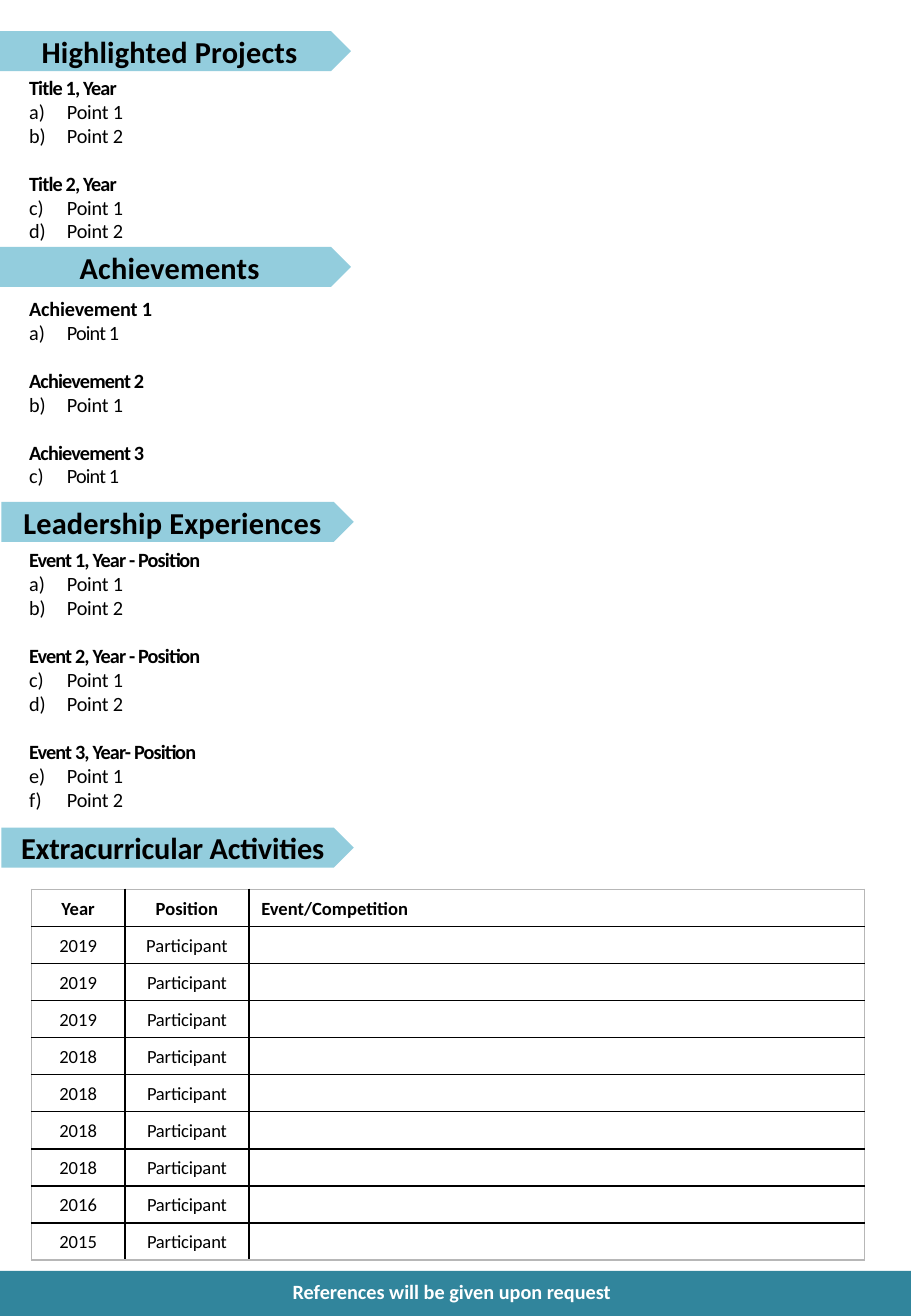
"""Build a resume page with project, achievement, leadership and activity sections."""
from lxml import etree
from pptx import Presentation
from pptx.dml.color import RGBColor
from pptx.enum import shapes, text
from pptx.oxml.ns import qn
from pptx.util import Cm, Pt

BLACK = RGBColor(0x00, 0x00, 0x00)
WHITE = RGBColor(0xFF, 0xFF, 0xFF)
SKY = RGBColor(0x93, 0xCD, 0xDD)
TEAL = RGBColor(0x31, 0x85, 0x9C)
GRID, FRAME = "000000", "B7B7B7"
LINE_PITCH = Pt(14.2)
TIGHT, NORMAL, LOOSE = -50, -10, 10


def add_run(paragraph, words, size, bold=False, color=BLACK, spacing=0):
    run = paragraph.add_run()
    run.text = words
    run.font.color.rgb = color
    for name, value in {"name": "Calibri", "size": Pt(size), "bold": bold}.items():
        setattr(run.font, name, value)
    run.font._element.set("spc", str(spacing))


def add_bar(kind, left, top, width, height, color):
    shape = slide.shapes.add_shape(kind, Cm(left), Cm(top), Cm(width), Cm(height))
    shape.shadow.inherit = False
    shape.fill.solid()
    shape.fill.fore_color.rgb = color
    shape.line.fill.background()
    return shape


presentation = Presentation()
presentation.slide_width, presentation.slide_height = Cm(19.05), Cm(27.51)
slide = presentation.slides.add_slide(presentation.slide_layouts[6])

banners = [
    ("Highlighted Projects", -0.03, 0.65, LOOSE),
    ("Achievements", -0.03, 5.16, LOOSE),
    ("Leadership Experiences", 0.03, 10.49, LOOSE),
    ("Extracurricular Activities", 0.03, 17.3, NORMAL),
]
for heading, left, top, spacing in banners:
    banner = add_bar(shapes.MSO_SHAPE.PENTAGON, left, top, 7.37, 0.84, SKY)
    banner.text_frame.vertical_anchor = text.MSO_ANCHOR.MIDDLE
    paragraph = banner.text_frame.paragraphs[0]
    paragraph.alignment = text.PP_ALIGN.CENTER
    add_run(paragraph, heading, 18, True, spacing=spacing)

two_points = ["Point 1", "Point 2"]
sections = [
    (1.45, 18.39, 4.24, [
        ("Title 1, Year", TIGHT, two_points, NORMAL),
        ("Title 2, Year", TIGHT, two_points, NORMAL),
    ]),
    (6.07, 19, 4.24, [
        ("Achievement 1", NORMAL, ["Point 1"], TIGHT),
        ("Achievement 2", TIGHT, ["Point 1"], NORMAL),
        ("Achievement 3", TIGHT, ["Point 1"], TIGHT),
    ]),
    (11.33, 18.39, 5.74, [
        ("Event 1, Year - Position", TIGHT, two_points, NORMAL),
        ("Event 2, Year - Position", TIGHT, two_points, NORMAL),
        ("Event 3, Year- Position", TIGHT, two_points, NORMAL),
    ]),
]
for top, width, height, entries in sections:
    box = slide.shapes.add_textbox(Cm(-0.3), Cm(top), Cm(width), Cm(height))
    frame = box.text_frame
    frame.word_wrap = True
    for index, (title, title_spacing, points, point_spacing) in enumerate(entries):
        paragraph = frame.add_paragraph() if index else frame.paragraphs[0]
        paragraph.line_spacing = LINE_PITCH
        if index:
            paragraph.space_before = LINE_PITCH
        paragraph._p.get_or_add_pPr().set("marL", str(Cm(0.66)))
        add_run(paragraph, title, 12, True, spacing=title_spacing)
        for point in points:
            paragraph = frame.add_paragraph()
            paragraph.line_spacing = LINE_PITCH
            properties = paragraph._p.get_or_add_pPr()
            properties.set("marL", str(Cm(1.45)))
            properties.set("indent", str(Cm(-0.79)))
            etree.SubElement(properties, qn("a:buAutoNum"), type="alphaLcParenR")
            add_run(paragraph, point, 12, spacing=point_spacing)

years = [2019] * 3 + [2018] * 4 + [2016, 2015]
rows = [("Year", "Position", "Event/Competition")]
rows += [(str(year), "Participant", "") for year in years]
column_widths = [1.95, 2.6, 12.87]
graphic = slide.shapes.add_table(
    len(rows), len(column_widths), Cm(0.66), Cm(18.59), Cm(sum(column_widths)), Cm(7.75))
table = graphic.table
for column, width in zip(table.columns, column_widths):
    column.width = Cm(width)
last_row, last_column = len(rows) - 1, len(column_widths) - 1
for r, row in enumerate(rows):
    table.rows[r].height = Cm(0.775)
    for c, words in enumerate(row):
        cell = table.cell(r, c)
        cell.vertical_anchor = text.MSO_ANCHOR.MIDDLE
        paragraph = cell.text_frame.paragraphs[0]
        paragraph.alignment = text.PP_ALIGN.LEFT if c == last_column else text.PP_ALIGN.CENTER
        paragraph.line_spacing = 1.07
        paragraph.space_after = Pt(8)
        if words:
            add_run(paragraph, words, 11, r == 0, spacing=NORMAL if r > 1 and c == 1 else 0)
        etree.SubElement(paragraph._p, qn("a:endParaRPr"), sz="1100")
        properties = cell._tc.get_or_add_tcPr()
        on_frame = {"L": c == 0, "R": c == last_column, "T": r == 0, "B": r == last_row}
        for side, outer in on_frame.items():
            border = etree.SubElement(properties, qn(f"a:ln{side}"), w=str(Pt(1)))
            fill = etree.SubElement(border, qn("a:solidFill"))
            etree.SubElement(fill, qn("a:srgbClr"), val=FRAME if outer else GRID)
        cell.fill.background()

add_bar(shapes.MSO_SHAPE.RECTANGLE, -0.03, 26.57, 19.1, 0.96, TEAL)
footer = slide.shapes.add_textbox(Cm(5.87), Cm(26.62), Cm(11.23), Cm(0.76))
footer.text_frame.word_wrap = True
add_run(footer.text_frame.paragraphs[0], "References will be given upon request", 12, True, WHITE)

presentation.save("out.pptx")
